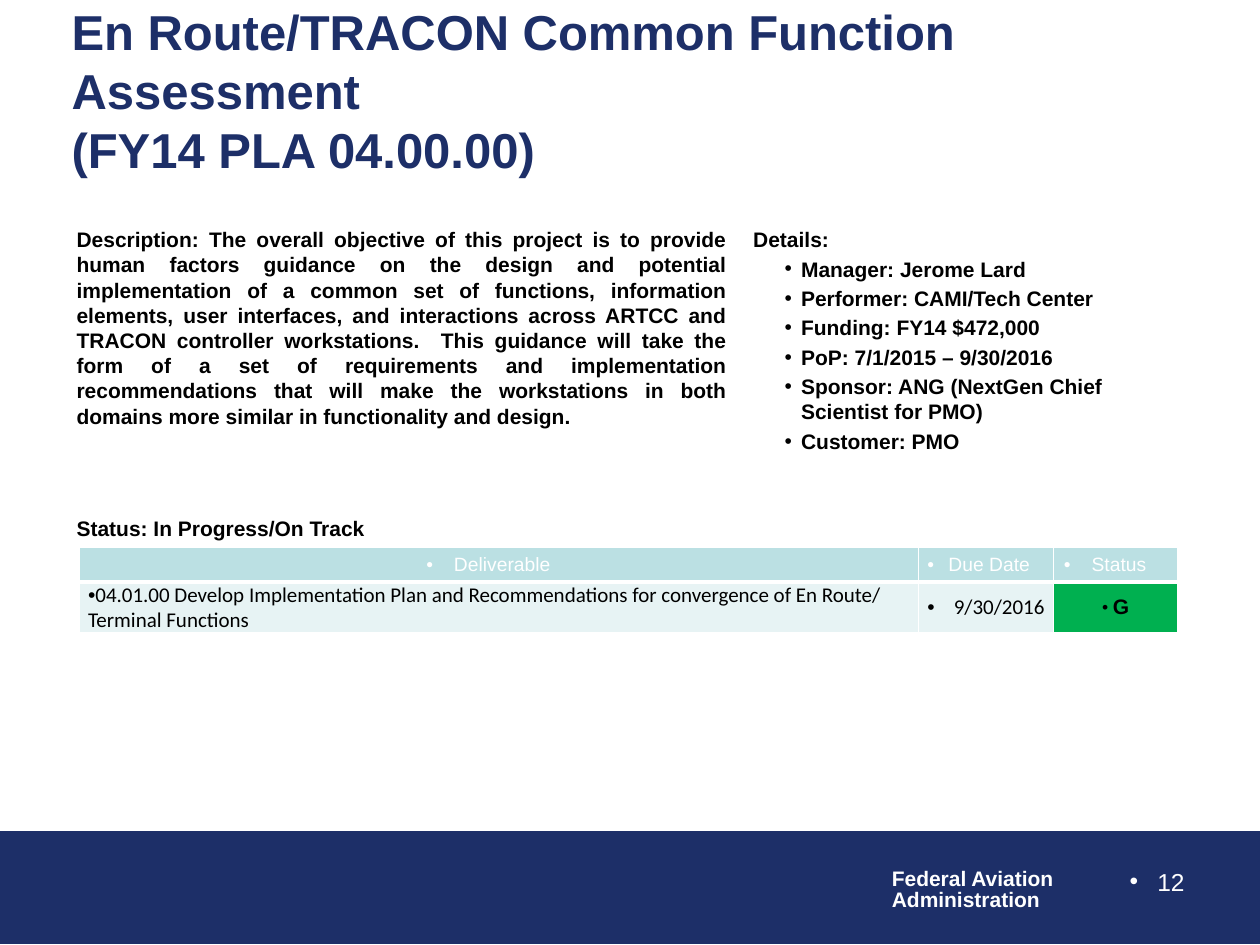
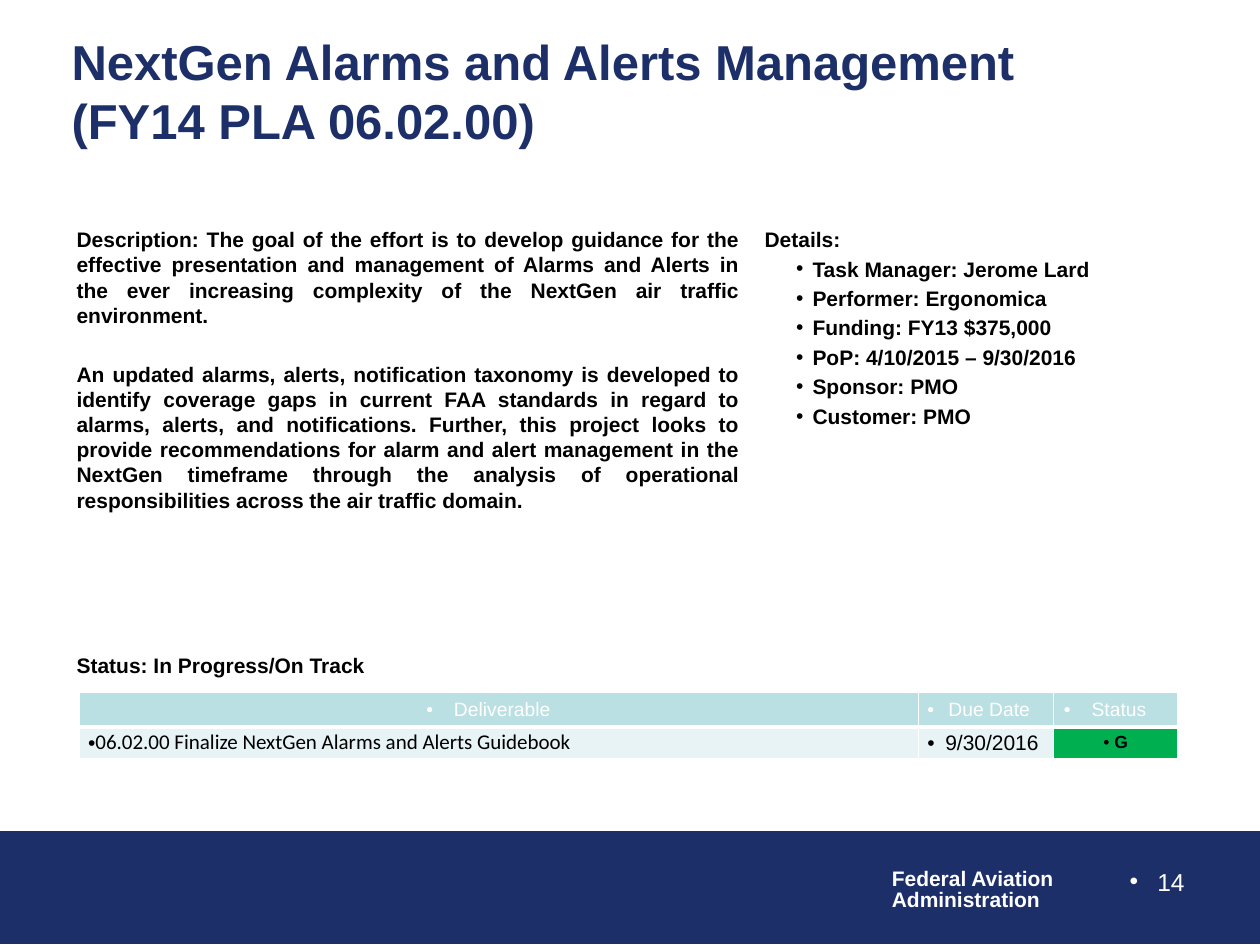
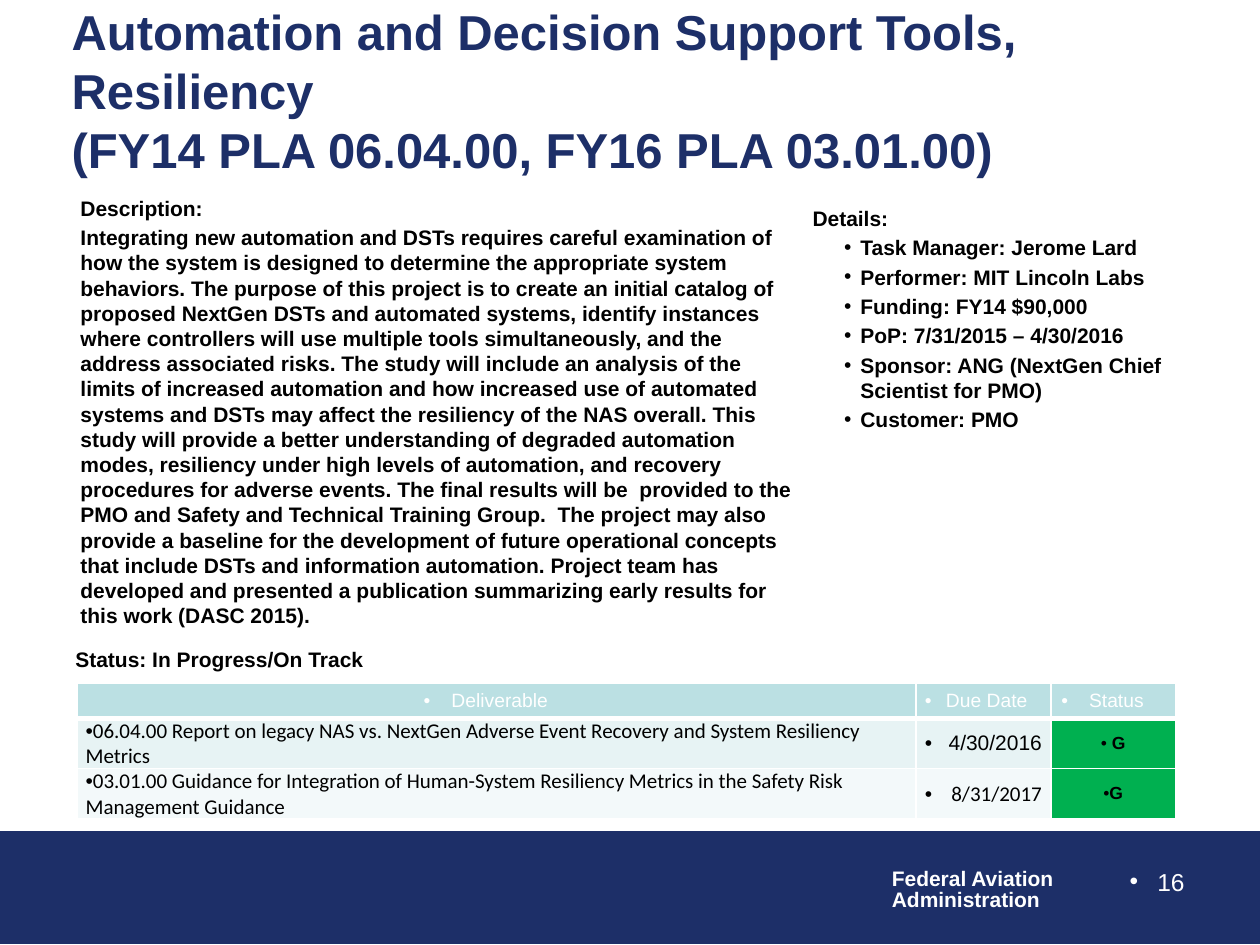
from lxml import etree
from pptx import Presentation
from pptx.dml.color import RGBColor
from pptx.enum.shapes import MSO_SHAPE
from pptx.enum.text import MSO_ANCHOR, PP_ALIGN
from pptx.oxml.ns import qn
from pptx.util import Inches, Pt

LEFT, CENTER, RIGHT, JUSTIFY = PP_ALIGN.LEFT, PP_ALIGN.CENTER, PP_ALIGN.RIGHT, PP_ALIGN.JUSTIFY
MIDDLE = MSO_ANCHOR.MIDDLE
RECTANGLE = MSO_SHAPE.RECTANGLE

COLORS = {
    "navy": "1D2F68", "white": "FFFFFF", "black": "000000", "header": "BBE0E3",
    "row_dark": "E7F3F4", "row_light": "F3F9FA", "green": "00B050",
}
HEADERS = ["Deliverable", "Due Date", "Status"]
COLUMN_WIDTHS = [6.66, 1.07, 0.99]
HEADER_HEIGHT, ROW_HEIGHT = 0.28, 0.25
LINE_GAP, BLOCK_GAP = 2.4, 19.2
HANGING = (0, -0.22)
STATUS = "Status: In Progress/On Track"

RESILIENCY_PURPOSE = "Integrating new automation and DSTs requires careful examination of how the system is designed to determine the appropriate system behaviors. The purpose of this project is to create an initial catalog of proposed NextGen DSTs and automated systems, identify instances where controllers will use multiple tools simultaneously, and the address associated risks. The study will include an analysis of the limits of increased automation and how increased use of automated systems and DSTs may affect the resiliency of the NAS overall. "
RESILIENCY_RESULTS = "This study will provide a better understanding of degraded automation modes, resiliency under high levels of automation, and recovery procedures for adverse events. The final results will be  provided to the PMO and Safety and Technical Training Group.  The project may also provide a baseline for the development of future operational concepts that include DSTs and information automation. Project team has developed and presented a publication summarizing early results for this work (DASC 2015)."

PROJECTS = [
    {
        "number": "12",
        "title": "En Route/TRACON Common Function Assessment\v(FY14 PLA 04.00.00)",
        "description_at": (0.51, 1.75, 5.36, 2.29),
        "description": [
            ("Description: The overall objective of this project is to provide human factors guidance on the design and potential implementation of a common set of functions, information elements, user interfaces, and interactions across ARTCC and TRACON controller workstations.  This guidance will take the form of a set of requirements and implementation recommendations that will make the workstations in both domains more similar in functionality and design.", JUSTIFY, 0),
        ],
        "details_at": (5.88, 1.75, 3.47, 2.29),
        "details": [
            "Manager: Jerome Lard", "Performer: CAMI/Tech Center", "Funding: FY14 $472,000",
            "PoP: 7/1/2015 – 9/30/2016", "Sponsor: ANG (NextGen Chief Scientist for PMO)",
            "Customer: PMO",
        ],
        "status_at": (0.51, 4.04, 8.83, 0.36),
        "table_at": (0.63, 4.34),
        "deliverables": [
            ("04.01.00 Develop Implementation Plan and Recommendations for convergence of En Route/ Terminal Functions", "9/30/2016", "Calibri", [(" ", 10), ("G", 12)]),
        ],
    },
    {
        "number": "14",
        "title": "NextGen Alarms and Alerts Management\v(FY14 PLA 06.02.00)",
        "description_at": (0.51, 1.75, 5.46, 2.29),
        "description": [
            ("Description: The goal of the effort is to develop guidance for the effective presentation and management of Alarms and Alerts in the ever increasing complexity of the NextGen air traffic environment.", JUSTIFY, 0),
            ("An updated alarms, alerts, notification taxonomy is developed to identify coverage gaps in current FAA standards in regard to alarms, alerts, and notifications. Further, this project looks to provide recommendations for alarm and alert management in the NextGen timeframe through the analysis of operational responsibilities across the air traffic domain.", JUSTIFY, BLOCK_GAP),
        ],
        "details_at": (5.97, 1.75, 3.38, 2.29),
        "details": [
            "Task Manager: Jerome Lard", "Performer: Ergonomica", "Funding: FY13 $375,000",
            "PoP: 4/10/2015 – 9/30/2016", "Sponsor: PMO", "Customer: PMO",
        ],
        "status_at": (0.51, 5.13, 8.83, 0.36),
        "table_at": (0.63, 5.49),
        "deliverables": [
            ("06.02.00 Finalize NextGen Alarms and Alerts Guidebook", "9/30/2016 ", "Arial", [(" G", 10)]),
        ],
    },
    {
        "number": "16",
        "title": "Automation and Decision Support Tools, Resiliency\v(FY14 PLA 06.04.00, FY16 PLA 03.01.00)",
        "description_at": (0.54, 1.5, 5.85, 2.29),
        "description": [
            ("Description:", JUSTIFY, 0),
            (RESILIENCY_PURPOSE + RESILIENCY_RESULTS, LEFT, LINE_GAP),
        ],
        "details_at": (6.35, 1.58, 2.98, 2.29),
        "details": [
            "Task Manager: Jerome Lard", "Performer: MIT Lincoln Labs", "Funding: FY14 $90,000",
            "PoP: 7/31/2015 – 4/30/2016", "Sponsor: ANG (NextGen Chief Scientist for PMO)",
            "Customer: PMO",
        ],
        "status_at": (0.5, 5.08, 8.83, 0.36),
        "table_at": (0.61, 5.42),
        "deliverables": [
            ("06.04.00 Report on legacy NAS vs. NextGen Adverse Event Recovery and System Resiliency Metrics", "4/30/2016", "Arial", [(" G", 10)]),
            ("03.01.00 Guidance for Integration of Human-System Resiliency Metrics in the Safety Risk Management Guidance", "8/31/2017", "Calibri", [("G", 10)]),
        ],
    },
]


def color(name):
    return RGBColor.from_string(COLORS[name])


def add_bullet(para, margin, indent):
    properties = para._p.get_or_add_pPr()
    properties.set("marL", str(Inches(margin)))
    properties.set("indent", str(Inches(indent)))
    etree.SubElement(properties, qn("a:buFont")).set("typeface", "Arial")
    etree.SubElement(properties, qn("a:buChar")).set("char", "•")


def style(para, size=12, shade="black", bold=False, align=LEFT, font="Arial", before=0):
    para.alignment = align
    para.space_before = Pt(before)
    para.font.size = Pt(size)
    para.font.name = font
    para.font.bold = bold
    para.font.color.rgb = color(shade)


def add_text(page, place, lines, wrap=True, **look):
    box = page.shapes.add_textbox(*map(Inches, place))
    frame = box.text_frame
    frame.word_wrap = wrap
    for index, (text, align, before, hang) in enumerate(lines):
        para = frame.paragraphs[0] if index == 0 else frame.add_paragraph()
        para.text = text
        if hang:
            add_bullet(para, *hang)
        style(para, align=align, before=before, **look)
    return frame


def add_frame(page, title, number):
    band = page.shapes.add_shape(RECTANGLE, 0, Inches(6.6), Inches(10), Inches(0.89))
    band.shadow.inherit = False
    band.fill.solid()
    band.fill.fore_color.rgb = color("navy")
    band.line.color.rgb = color("navy")
    band.line.width = Pt(0.75)
    agency = [(name, LEFT, 0, None) for name in ("Federal Aviation", "Administration")]
    footer = add_text(page, (6.98, 6.85, 1.5, 0.44), agency, wrap=False, shade="white", bold=True)
    for para in footer.paragraphs:
        para.line_spacing = 0.85
    heading = add_text(page, (0.47, 0.38, 9.27, 0.67), [(title, LEFT, 0, None)],
                       size=28, shade="navy", bold=True)
    heading.vertical_anchor = MIDDLE
    add_text(page, (7.17, 6.83, 2.33, 0.52), [(number, RIGHT, 0, HANGING)], size=14, shade="white")


def set_borders(cell, bottom):
    properties = cell._tc.get_or_add_tcPr()
    widths = {"a:lnL": 1, "a:lnR": 1, "a:lnT": 1, "a:lnB": bottom}
    for position, (tag, width) in enumerate(widths.items()):
        line = etree.Element(qn(tag), w=str(Pt(width)))
        fill = etree.SubElement(line, qn("a:solidFill"))
        etree.SubElement(fill, qn("a:srgbClr")).set("val", COLORS["white"])
        properties.insert(position, line)


def fill_cell(cell, spans, fill, hang=HANGING, bottom=1, **look):
    cell.fill.solid()
    cell.fill.fore_color.rgb = color(fill)
    set_borders(cell, bottom)
    cell.vertical_anchor = MIDDLE
    cell.margin_left = cell.margin_right = Inches(0.07)
    cell.margin_top = cell.margin_bottom = 0
    para = cell.text_frame.paragraphs[0]
    add_bullet(para, *hang)
    style(para, size=spans[0][1], **look)
    for text, size in spans:
        span = para.add_run()
        span.text = text
        if len(spans) > 1:
            span.font.size = Pt(size)


def add_deliverables(page, place, deliverables):
    heights = [HEADER_HEIGHT] + [ROW_HEIGHT] * len(deliverables)
    size = (sum(COLUMN_WIDTHS), sum(heights))
    table = page.shapes.add_table(len(heights), len(HEADERS), *map(Inches, place + size)).table
    for column, width in zip(table.columns, COLUMN_WIDTHS):
        column.width = Inches(width)
    for row, height in zip(table.rows, heights):
        row.height = Inches(height)
    for column, name in enumerate(HEADERS):
        fill_cell(table.cell(0, column), [(name, 11)], "header", bottom=3, shade="white", align=CENTER)
    for row, (task, due, due_font, status) in enumerate(deliverables, 1):
        shade = "row_dark" if row % 2 else "row_light"
        fill_cell(table.cell(row, 0), [(task, 12)], shade, hang=(0, 0), font="Calibri")
        fill_cell(table.cell(row, 1), [(due, 12)], shade, align=RIGHT, font=due_font)
        fill_cell(table.cell(row, 2), status, "green", hang=(0, 0), align=CENTER, bold=True)


def add_project(deck, project):
    page = deck.slides.add_slide(deck.slide_layouts[6])
    add_frame(page, project["title"], project["number"])
    details = [("Details:", LEFT, 0, None)]
    details += [(item, LEFT, LINE_GAP, (0.38, -0.13)) for item in project["details"]]
    description = [line + (None,) for line in project["description"]]
    add_text(page, project["details_at"], details, bold=True)
    add_text(page, project["description_at"], description, bold=True)
    add_text(page, project["status_at"], [(STATUS, JUSTIFY, 0, None)], bold=True)
    add_deliverables(page, project["table_at"], project["deliverables"])


def main():
    deck = Presentation()
    deck.slide_width, deck.slide_height = Inches(10), Inches(7.5)
    for project in PROJECTS:
        add_project(deck, project)
    deck.save("out.pptx")


if __name__ == "__main__":
    main()
